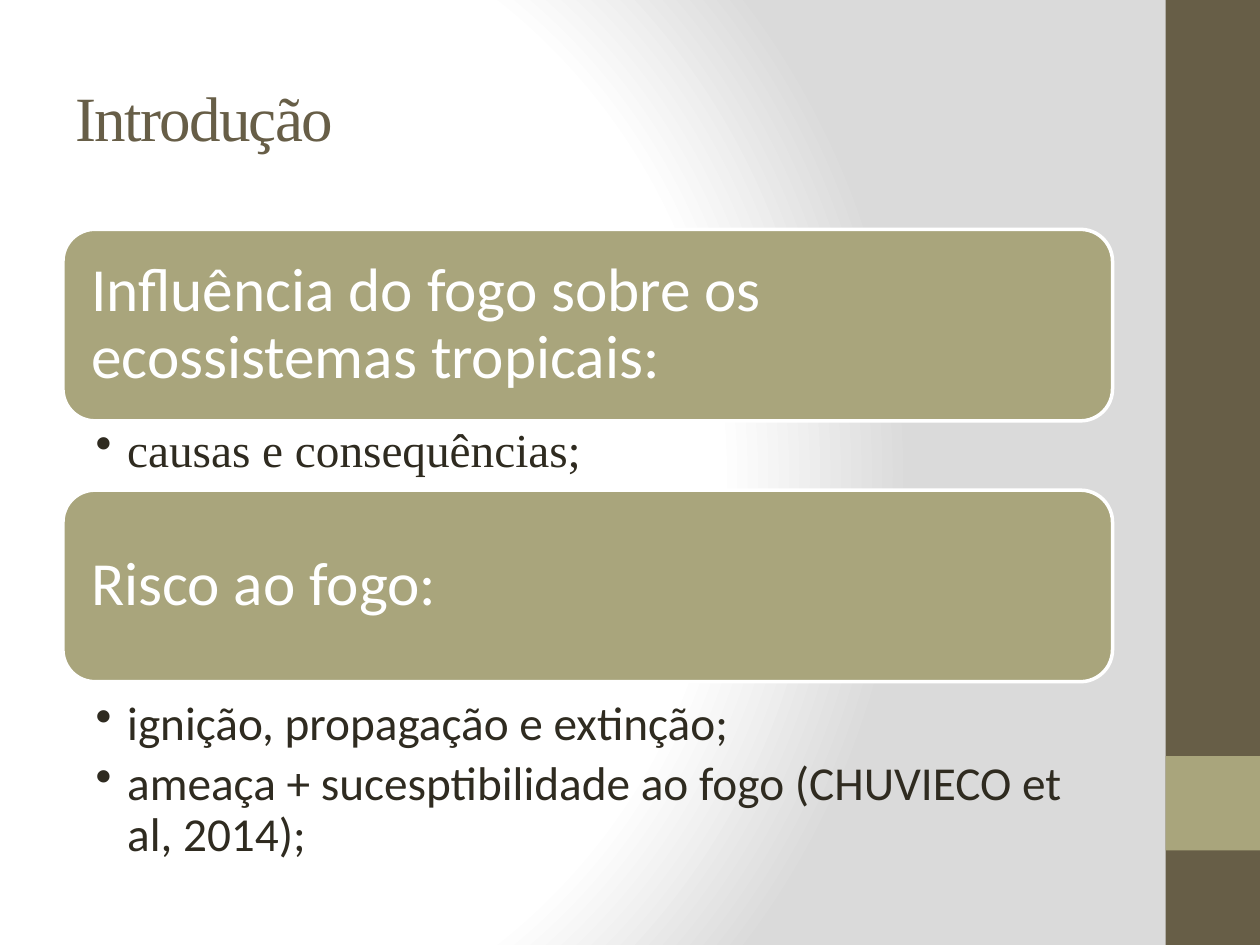
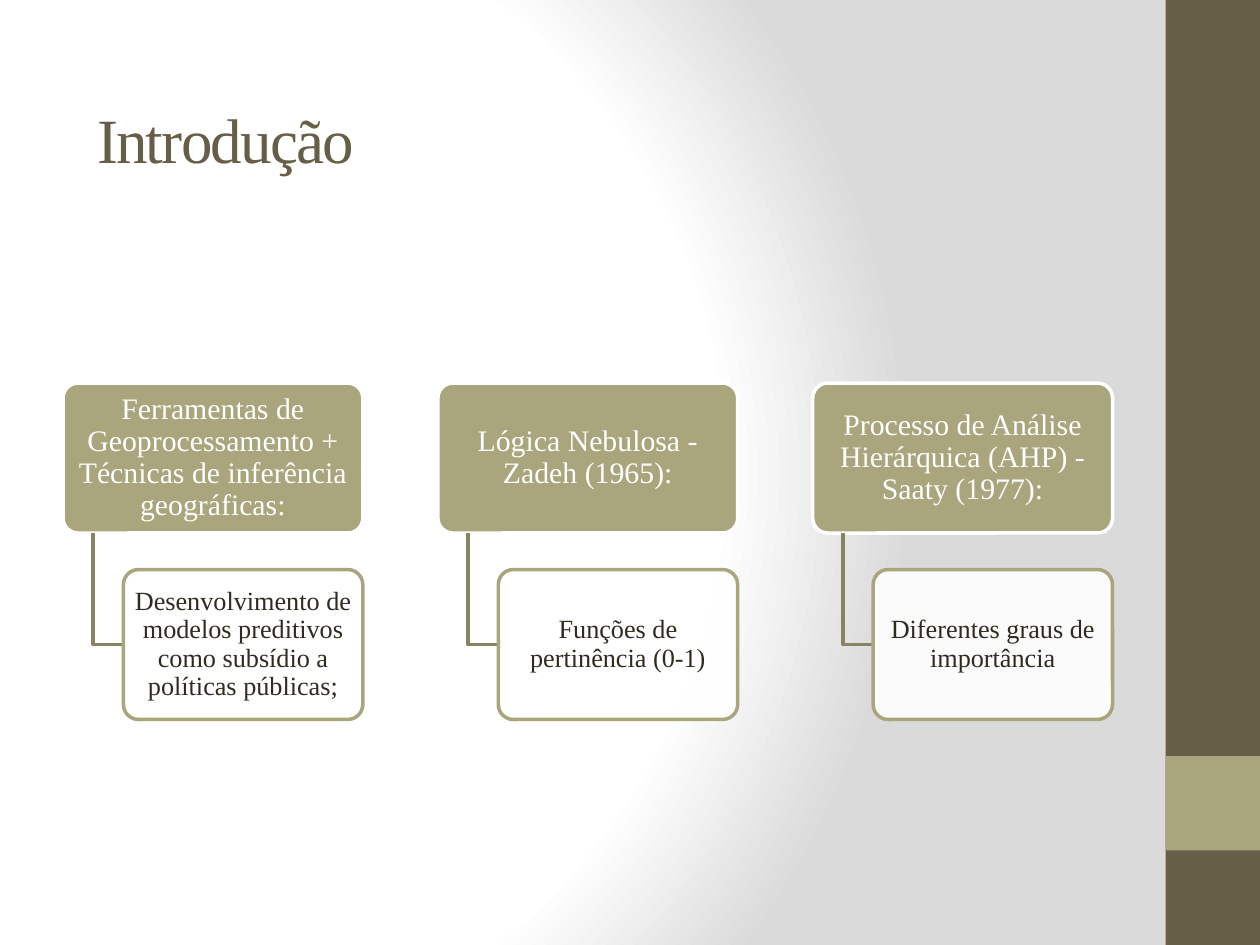
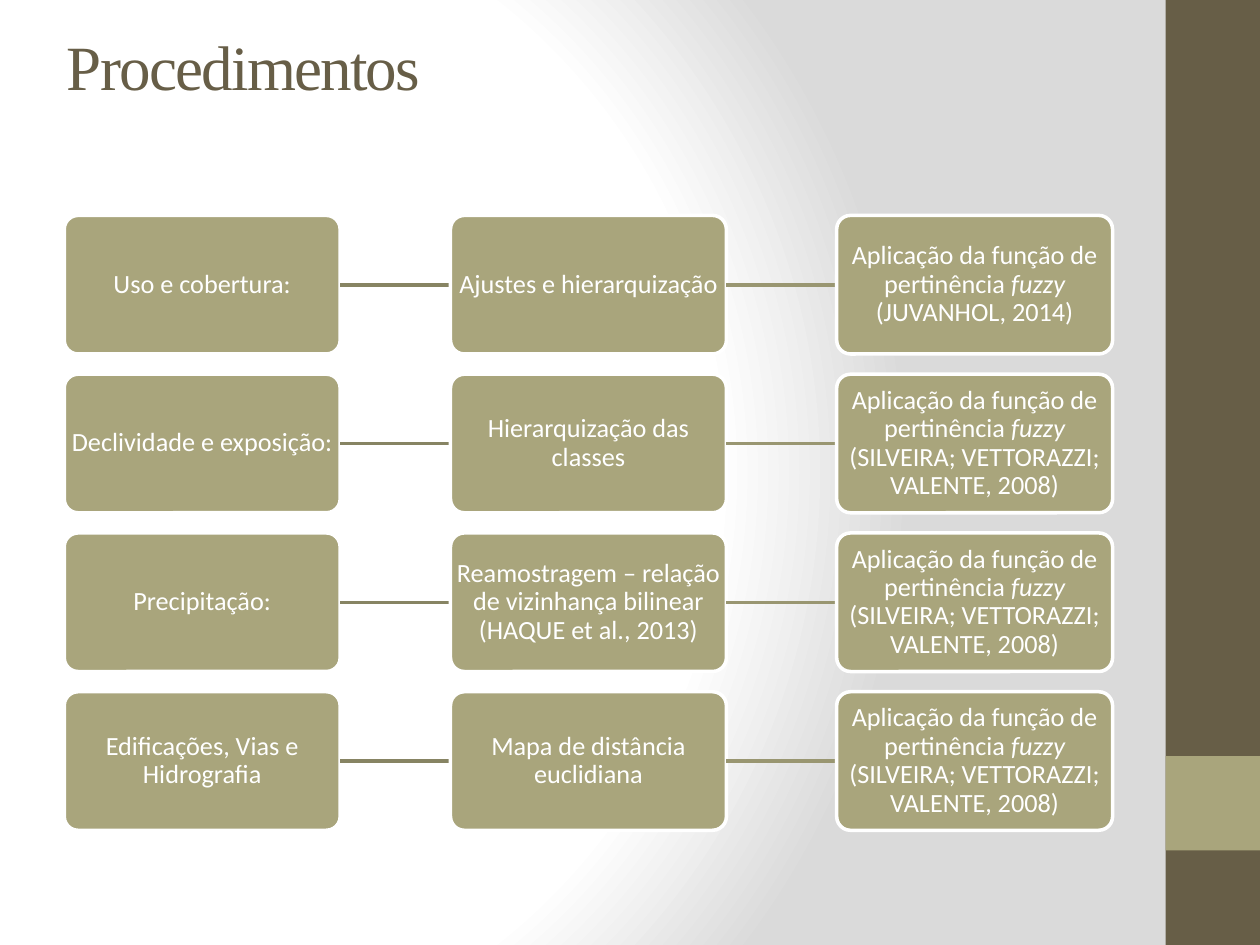
from lxml import etree
from pptx import Presentation
from pptx.dml.color import RGBColor
from pptx.enum.shapes import MSO_CONNECTOR, MSO_SHAPE
from pptx.enum.text import MSO_ANCHOR as ANCHOR, PP_ALIGN as ALIGN
from pptx.oxml import parse_xml
from pptx.oxml.ns import nsdecls, qn
from pptx.util import Inches as In, Pt

BROWN = RGBColor(0x67, 0x5E, 0x47)
OLIVE = RGBColor(0xA9, 0xA5, 0x7C)
DARK_OLIVE = RGBColor(0x87, 0x84, 0x63)
MID_OLIVE = RGBColor(0x99, 0x96, 0x71)
INK = RGBColor(0x2F, 0x2B, 0x20)
WHITE = RGBColor(0xFF, 0xFF, 0xFF)
SERIF, SANS = "Times New Roman", "Calibri"
LEFT, BODY_W = 0.5, 8.33


def add_box(s, kind, x, y, w, h, fill, line=None):
    sp = s.shapes.add_shape(kind, In(x), In(y), In(w), In(h))
    sp.shadow.inherit = False
    sp.fill.solid()
    sp.fill.fore_color.rgb = fill
    if line is None:
        sp.line.fill.background()
    else:
        sp.line.color.rgb = line
        sp.line.width = Pt(2)
    return sp


def write(sp, lines, font, size, color, align, inset_x, inset_y, anchor=ANCHOR.MIDDLE):
    """Fill a shape with one paragraph per line; *text* is set in italics."""
    tf = sp.text_frame
    tf.word_wrap = True
    tf.vertical_anchor = anchor
    tf.margin_left = tf.margin_right = In(inset_x)
    tf.margin_top = tf.margin_bottom = In(inset_y)
    for i, line in enumerate(lines):
        p = tf.paragraphs[0] if i == 0 else tf.add_paragraph()
        p.alignment = align
        p.line_spacing = 0.9
        for j, part in enumerate(line.split("*")):
            r = p.add_run()
            r.text = part
            r.font.name, r.font.size, r.font.color.rgb = font, Pt(size), color
            if j % 2:
                r.font.italic = True


prs = Presentation()
prs.slide_width, prs.slide_height = In(10), In(7.5)
master = prs.slide_master

# Shared background: white glow fading to grey
master.background.fill.solid()
solid = master.element.xpath(".//p:bgPr/a:solidFill")[0]
solid.getparent().replace(solid, parse_xml(
    f'<a:gradFill {nsdecls("a")} rotWithShape="1"><a:gsLst>'
    '<a:gs pos="0"><a:srgbClr val="FFFFFF"/></a:gs>'
    '<a:gs pos="75000"><a:srgbClr val="FFFFFF"/></a:gs>'
    '<a:gs pos="100000"><a:srgbClr val="DADADA"/></a:gs></a:gsLst>'
    '<a:path path="circle"><a:fillToRect l="20000" t="50000" r="100000" b="50000"/></a:path>'
    '</a:gradFill>'))

# Slides with their titles: text, left, top, height
titles = [("Introdução", 0.5, 0.3, 1.25),
          ("Introdução", 0.67, 0.47, 1.25),
          ("Procedimentos", 0.43, 0.21, 0.61)]
slides = []
for text, x, y, h in titles:
    s = prs.slides.add_slide(prs.slide_layouts[5])
    title = s.shapes.title
    title.left, title.top, title.width, title.height = In(x), In(y), In(BODY_W), In(h)
    title.text_frame.text = text
    title.text_frame.vertical_anchor = ANCHOR.MIDDLE
    p = title.text_frame.paragraphs[0]
    p.alignment = ALIGN.LEFT
    r = p.runs[0]
    r.font.name, r.font.size, r.font.color.rgb = SERIF, Pt(36), BROWN
    r.font._element.set("spc", "-100")
    slides.append(s)
topics, methods, procedures = slides

# Side bands, moved to the master so that every slide shows them
for i, (y, h, color) in enumerate([(0, 7.5, BROWN), (6, 0.75, OLIVE)]):
    band = add_box(topics, MSO_SHAPE.RECTANGLE, 9.25, y, 0.75, h, color)
    band.element.nvSpPr.cNvPr.set("id", str(100 + i))
    master.shapes.element.append(band.element)

# Slide 1: headings with bullets below
sections = [
    (1.82, "Influência do fogo sobre os ecossistemas tropicais:",
     3.34, 0.63, SERIF, ["causas e consequências;"]),
    (3.89, "Risco ao fogo:",
     5.5, 1.43, SANS, ["ignição, propagação e extinção;",
                       "ameaça + sucesptibilidade ao fogo (CHUVIECO et al, 2014);"]),
]
for y, heading, list_y, list_h, font, items in sections:
    sp = add_box(topics, MSO_SHAPE.ROUNDED_RECTANGLE, LEFT, y, BODY_W, 1.52, OLIVE, WHITE)
    write(sp, [heading], SANS, 35, WHITE, ALIGN.LEFT, 0.15, 0.15)
    bullets = topics.shapes.add_textbox(In(LEFT), In(list_y), In(BODY_W), In(list_h))
    write(bullets, items, font, 27, INK, ALIGN.LEFT, 0.26, 0.05, ANCHOR.TOP)
    for p in bullets.text_frame.paragraphs:
        p.space_after = Pt(5.4)
        pPr = p._p.get_or_add_pPr()
        pPr.set("marL", str(In(0.25)))
        pPr.set("indent", str(In(-0.25)))
        etree.SubElement(pPr, qn("a:buChar")).set("char", "•")

# Slide 2: three methods, each with its result hanging below
pairs = [
    ("Ferramentas de Geoprocessamento + Técnicas de inferência geográficas:",
     "Desenvolvimento de modelos preditivos como subsídio a políticas públicas;"),
    ("Lógica Nebulosa - Zadeh (1965):", "Funções de pertinência (0-1)"),
    ("Processo de Análise Hierárquica (AHP) - Saaty (1977):",
     "Diferentes graus de importância"),
]
BOX_W, BOX_H, STEP, INDENT = 2.38, 1.19, 2.975, 0.24
METHOD_Y, RESULT_Y = 3.04, 4.52
for i, (method, result) in enumerate(pairs):
    x = LEFT + i * STEP
    head = add_box(methods, MSO_SHAPE.ROUNDED_RECTANGLE, x, METHOD_Y, BOX_W, BOX_H, OLIVE, WHITE)
    head.adjustments[0] = 0.1
    write(head, [method], SERIF, 17, WHITE, ALIGN.CENTER, 0.04, 0.02)

    stem_x, result_x, mid_y = x + INDENT, x + 2 * INDENT, RESULT_Y + BOX_H / 2
    fb = methods.shapes.build_freeform(In(stem_x), In(METHOD_Y + BOX_H))
    fb.add_line_segments([(In(stem_x), In(mid_y)), (In(result_x), In(mid_y))], close=False)
    elbow = fb.convert_to_shape()
    elbow.shadow.inherit = False
    elbow.fill.background()
    elbow.line.color.rgb, elbow.line.width = DARK_OLIVE, Pt(2)

    leaf = add_box(methods, MSO_SHAPE.ROUNDED_RECTANGLE, result_x, RESULT_Y,
                   BOX_W - 2 * INDENT, BOX_H, WHITE, OLIVE)
    leaf.adjustments[0] = 0.1
    color = leaf.element.spPr.find(qn("a:solidFill"))[0]
    etree.SubElement(color, qn("a:alpha")).set("val", "90000")
    write(leaf, [result], SERIF, 15, INK, ALIGN.CENTER, 0.03, 0.02)

# Slide 3: one row per variable, three linked steps
FUZZY = "Aplicação da função de pertinência *fuzzy *"
SILVEIRA = FUZZY + "(SILVEIRA; VETTORAZZI; VALENTE, 2008)"
rows = [
    ("Uso e cobertura:", "Ajustes e hierarquização", FUZZY + "(JUVANHOL, 2014)"),
    ("Declividade e exposição:", "Hierarquização das classes", SILVEIRA),
    ("Precipitação:", "Reamostragem – relação de vizinhança bilinear (HAQUE et al., 2013)",
     SILVEIRA),
    ("Edificações, Vias e Hidrografia", "Mapa de distância euclidiana", SILVEIRA),
]
GRID_X, GRID_Y, COL, ROW, CELL_W, CELL_H = 0.51, 1.71, 3.065, 1.26, 2.19, 1.1
for j, row in enumerate(rows):
    y = GRID_Y + j * ROW
    for i, text in enumerate(row):
        x = GRID_X + i * COL
        if i:
            mid_y = In(y + CELL_H / 2)
            link = procedures.shapes.add_connector(
                MSO_CONNECTOR.STRAIGHT, In(x - COL + CELL_W), mid_y, In(x), mid_y)
            link.line.color.rgb = (DARK_OLIVE, MID_OLIVE)[i - 1]
            link.line.width = Pt(2)
            etree.SubElement(link.element.spPr, qn("a:effectLst"))
        sp = add_box(procedures, MSO_SHAPE.ROUNDED_RECTANGLE, x, y, CELL_W, CELL_H, OLIVE, WHITE)
        sp.adjustments[0] = 0.1
        write(sp, [text], SANS, 15, WHITE, ALIGN.CENTER, 0.01, 0.01)

prs.save("out.pptx")
